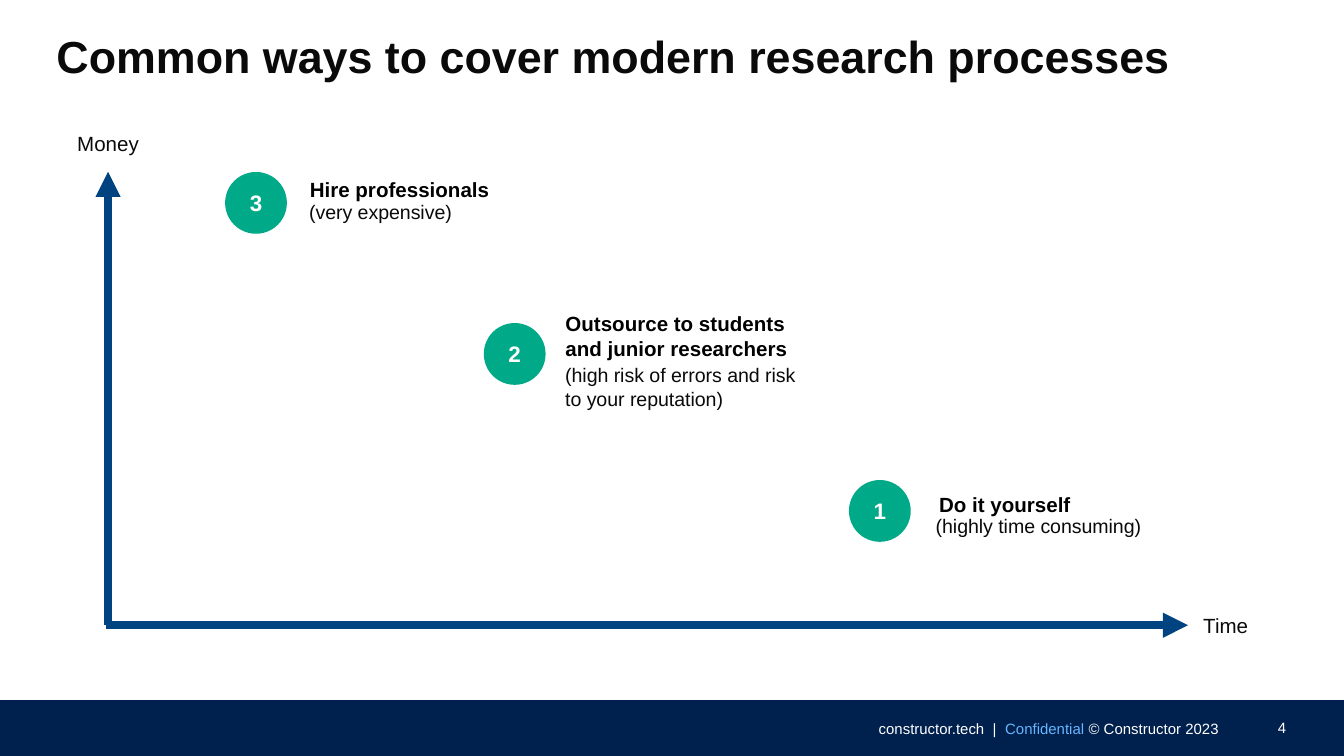
from collections import namedtuple

from lxml.etree import SubElement
from pptx import Presentation
from pptx.dml.color import RGBColor
from pptx.enum.shapes import MSO_CONNECTOR as Connector, MSO_SHAPE as Shape
from pptx.enum.text import MSO_ANCHOR as Anchor, MSO_AUTO_SIZE as AutoSize, PP_ALIGN as Align
from pptx.oxml.ns import qn
from pptx.util import Inches, Pt

NAVY = RGBColor(0x00, 0x20, 0x4D)
BLUE = RGBColor(0x00, 0x43, 0x81)
SKY = RGBColor(0x67, 0xB6, 0xFF)
GREEN = RGBColor(0x00, 0xA9, 0x87)
INK = RGBColor(0x0A, 0x0A, 0x0A)
BLACK = RGBColor(0x00, 0x00, 0x00)
WHITE = RGBColor(0xFF, 0xFF, 0xFF)

COLUMNS, ROWS = 100, 56.25
CELL = Inches(0.1)
MARKER = 4.6

Box = namedtuple("Box", "left top width height")
Step = namedtuple("Step", "number left top heading_at note_at heading note")

STEPS = [
    Step("1", 63.17, 35.72, (6.7, 0.9), (6.45, 2.5),
         "Do it yourself", "(highly time consuming)"),
    Step("2", 36, 24.04, (6.07, -0.9), (6.05, 3),
         "Outsource to students \nand junior researchers",
         "(high risk of errors and risk \nto your reputation)"),
    Step("3", 16.75, 12.8, (6.3, 0.4), (6.25, 2.1),
         "Hire professionals", "(very expensive)"),
]


def cells(*lengths):
    return [round(length * CELL) for length in lengths]


def inside(box, left, top, width, height):
    return Box(box.left + left, box.top + top, width, height)


def write(shape, *parts, size, color=INK, bold=False, align=Align.LEFT,
          anchor=Anchor.TOP, wrap=True, inset=(0, 0), line_spacing=None):
    frame = shape.text_frame
    frame.word_wrap = wrap
    frame.auto_size = AutoSize.NONE if wrap else AutoSize.SHAPE_TO_FIT_TEXT
    frame.vertical_anchor = anchor
    frame.margin_left = frame.margin_right = Inches(inset[0])
    frame.margin_top = frame.margin_bottom = Inches(inset[1])
    paragraph = frame.paragraphs[0]
    paragraph.alignment = align
    paragraph.line_spacing = line_spacing
    for part in parts:
        words, part_color = part if isinstance(part, tuple) else (part, color)
        for index, line in enumerate(words.split("\n")):
            if index:
                paragraph.add_line_break()
            run = paragraph.add_run()
            run.text = line
            run.font.name = "Arial"
            run.font.size = Pt(size)
            run.font.bold = bold
            run.font.color.rgb = part_color


def add_text(shapes, box, *parts, **style):
    write(shapes.add_textbox(*cells(*box)), *parts, **style)


def add_filled(shapes, kind, box, color):
    shape = shapes.add_shape(kind, *cells(*box))
    shape.shadow.inherit = False
    shape.fill.solid()
    shape.fill.fore_color.rgb = color
    shape.line.fill.background()
    return shape


def add_axis(shapes, start, end):
    axis = shapes.add_connector(Connector.STRAIGHT, *cells(*start, *end))
    axis.line.color.rgb = BLUE
    axis.line.width = Pt(4.5)
    SubElement(axis.line._get_or_add_ln(), qn("a:tailEnd"), type="triangle")
    SubElement(axis._element.spPr, qn("a:effectLst"))


def add_footer(slide, box):
    add_filled(slide.shapes, Shape.RECTANGLE, box, NAVY)
    style = dict(size=8, color=WHITE, align=Align.RIGHT, anchor=Anchor.MIDDLE)
    add_text(slide.shapes, inside(box, 91.6, 0.3, 4.1, 3.5), "4", **style)
    add_text(slide.shapes, inside(box, 45.1, 0.6, 45.6, 3), "constructor.tech  |  ",
             ("Confidential", SKY), " © Constructor 2023", **style)


def add_title(slide, box):
    title = slide.shapes.title
    title.left, title.top, title.width, title.height = cells(*box)
    write(title, "Common ways to cover modern research processes",
          size=24, bold=True, line_spacing=0.9)


def add_axes(slide, box):
    right, bottom = box.left + box.width, box.top + box.height
    add_axis(slide.shapes, (box.left, bottom), (box.left, box.top))
    add_axis(slide.shapes, (box.left - 0.15, bottom), (right, bottom))
    style = dict(size=11, align=Align.CENTER, wrap=False, inset=(0.1, 0.05))
    add_text(slide.shapes, Box(right, bottom - 1.4, 5.6, 2.9), "Time", **style)
    add_text(slide.shapes, inside(box, -3.45, -3.55, 6.9, 2.9), "Money", **style)


def add_step(slide, box, step):
    shapes = slide.shapes.add_group_shape().shapes
    write(add_filled(shapes, Shape.OVAL, box, GREEN), step.number, size=12,
          color=WHITE, bold=True, align=Align.CENTER, anchor=Anchor.MIDDLE)
    add_text(shapes, inside(box, *step.heading_at, 24, 4), step.heading,
             size=11, color=BLACK, bold=True)
    add_text(shapes, inside(box, *step.note_at, 21.5, 4), step.note, size=10.5)


def main():
    deck = Presentation()
    deck.slide_width, deck.slide_height = cells(COLUMNS, ROWS)
    slide = deck.slides.add_slide(deck.slide_layouts[5])
    add_footer(slide, Box(0, ROWS - 4.15, COLUMNS, 4.15))
    add_title(slide, Box(4.2, 2.6, 91.5, 7.8))
    add_axes(slide, Box(8.04, 12.78, 80.36, 33.74))
    for step in STEPS:
        add_step(slide, Box(step.left, step.top, MARKER, MARKER), step)
    deck.save("out.pptx")


if __name__ == "__main__":
    main()
